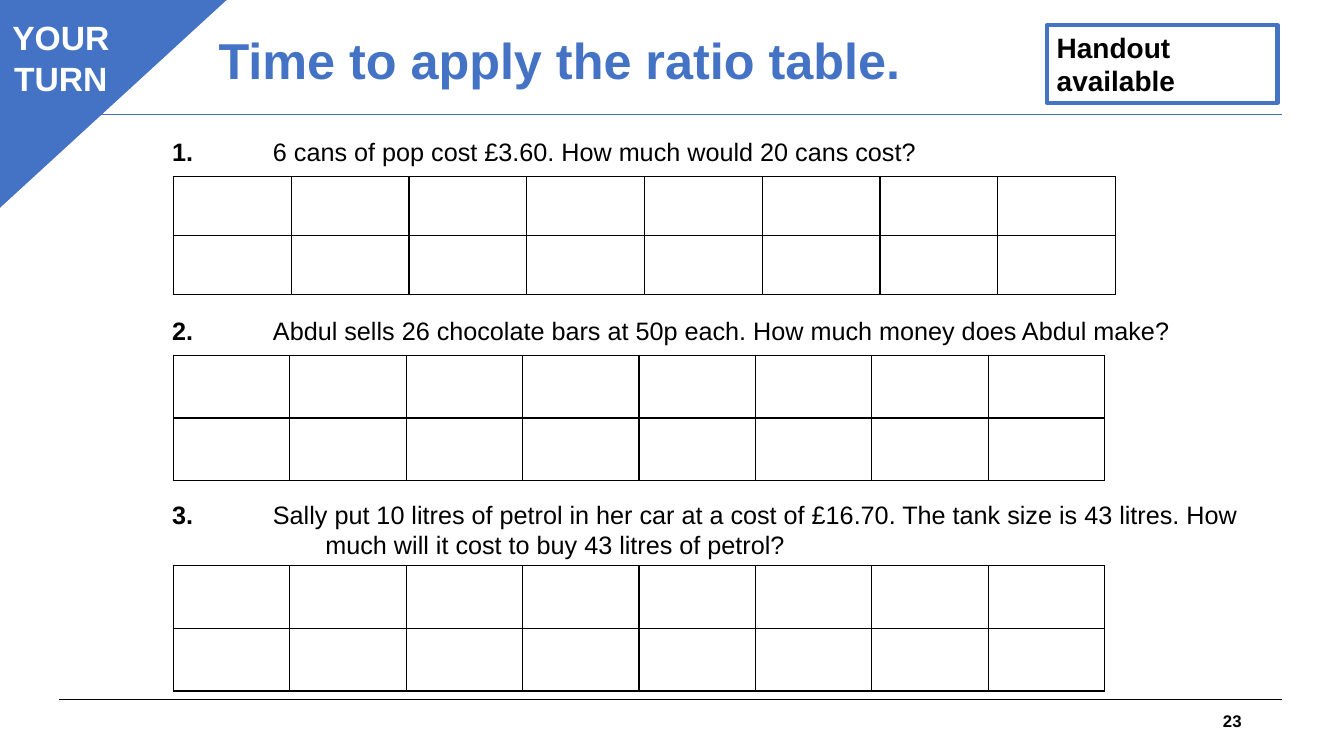
"""Build a slide with three ratio-table questions and blank working grids."""
from dataclasses import dataclass

from lxml.etree import SubElement
from pptx import Presentation
from pptx.dml.color import RGBColor
from pptx.enum.shapes import MSO_CONNECTOR, MSO_SHAPE
from pptx.enum.text import MSO_ANCHOR, PP_ALIGN
from pptx.oxml.ns import qn
from pptx.shapes.autoshape import Shape
from pptx.slide import Slide
from pptx.text.text import TextFrame, _Paragraph
from pptx.util import Pt

BLUE = "4472C4"
BLACK = "000000"
WHITE = "FFFFFF"
FONT = "Arial"
COLUMNS = 8
ROWS = 2
LEFT = 115.9
GRID_LEFT = 123.84
TAB_STOP = 72
WRAP_INDENT = 109.5


@dataclass
class Frame:
    left: float
    top: float
    width: float
    height: float


@dataclass
class Question:
    number: str
    lines: list[str]
    frame: Frame
    grid: Frame


QUESTIONS = [
    Question("1.", ["6 cans of pop cost £3.60. How much would 20 cans cost?"],
             Frame(LEFT, 93.7, 611, 29), Frame(GRID_LEFT, 126, 673.2, 84.2)),
    Question("2.", ["Abdul sells 26 chocolate bars at 50p each. How much money does Abdul make?"],
             Frame(LEFT, 221.4, 738, 29), Frame(GRID_LEFT, 253.8, 665.3, 89.6)),
    Question("3.", ["Sally put 10 litres of petrol in her car at a cost of £16.70. "
                    "The tank size is 43 litres. How",
                    "much will it cost to buy 43 litres of petrol?"],
             Frame(LEFT, 352.6, 798, 51), Frame(GRID_LEFT, 404, 665.3, 89.6)),
]


def color(value: str) -> RGBColor:
    return RGBColor.from_string(value)


def place(frame: Frame) -> tuple[Pt, Pt, Pt, Pt]:
    return Pt(frame.left), Pt(frame.top), Pt(frame.width), Pt(frame.height)


def add_span(para: _Paragraph, text: str, size: float, ink: str = BLACK, bold: bool = True) -> None:
    span = para.add_run()
    span.text = text
    span.font.name = FONT
    span.font.size = Pt(size)
    span.font.bold = bold
    span.font.color.rgb = color(ink)


def add_box(page: Slide, frame: Frame) -> TextFrame:
    text = page.shapes.add_textbox(*place(frame)).text_frame
    text.word_wrap = True
    text.vertical_anchor = MSO_ANCHOR.MIDDLE
    return text


def add_panel(page: Slide, kind: MSO_SHAPE, frame: Frame, fill: str | None, weight: float) -> Shape:
    panel = page.shapes.add_shape(kind, *place(frame))
    panel.shadow.inherit = False
    if fill:
        panel.fill.solid()
        panel.fill.fore_color.rgb = color(fill)
    else:
        panel.fill.background()
    panel.line.color.rgb = color(BLUE)
    panel.line.width = Pt(weight)
    panel.text_frame.word_wrap = True
    panel.text_frame.vertical_anchor = MSO_ANCHOR.TOP
    return panel


def add_rule(page: Slide, top: float, ink: str) -> None:
    rule = page.shapes.add_connector(MSO_CONNECTOR.STRAIGHT, Pt(42.5), Pt(top), Pt(916), Pt(top))
    rule.line.color.rgb = color(ink)
    rule.line.width = Pt(0.75)
    SubElement(rule._element.spPr, qn("a:effectLst"))


def add_grid(page: Slide, frame: Frame) -> None:
    table = page.shapes.add_table(ROWS, COLUMNS, *place(frame)).table
    table.first_row = False
    table.horz_banding = False
    for column in table.columns:
        column.width = Pt(frame.width / COLUMNS)
    for row in table.rows:
        row.height = Pt(frame.height / ROWS)
    for cell in table.iter_cells():
        properties = cell._tc.get_or_add_tcPr()
        for side in ("lnL", "lnR", "lnT", "lnB"):
            border = SubElement(properties, qn(f"a:{side}"), w=str(Pt(1)))
            paint = SubElement(border, qn("a:solidFill"))
            SubElement(paint, qn("a:srgbClr"), val=BLACK)
        cell.fill.background()


def add_question(page: Slide, question: Question) -> None:
    add_grid(page, question.grid)
    text = add_box(page, question.frame)
    para = text.paragraphs[0]
    stops = SubElement(para._p.get_or_add_pPr(), qn("a:tabLst"))
    SubElement(stops, qn("a:tab"), pos=str(Pt(TAB_STOP)), algn="l")
    add_span(para, f"{question.number}\t", 18)
    add_span(para, question.lines[0], 18, bold=False)
    for line in question.lines[1:]:
        para = text.add_paragraph()
        para._p.get_or_add_pPr().set("marL", str(Pt(WRAP_INDENT)))
        add_span(para, line, 18, bold=False)
    para.space_after = Pt(6)


def add_header(page: Slide) -> None:
    title = add_box(page, Frame(149, 10.8, 783.4, 68.4)).paragraphs[0]
    title.line_spacing = 0.9
    add_span(title, "Time to apply the ratio table.", 36, BLUE)

    corner = add_panel(page, MSO_SHAPE.ISOSCELES_TRIANGLE, Frame(-2.2, -1.4, 164.9, 151.2), BLUE, 1)
    corner.adjustments[0] = 0
    corner._element.spPr.get_or_add_xfrm().set("flipV", "1")

    badge = add_panel(page, MSO_SHAPE.RECTANGLE, Frame(0.9, 8.8, 85, 59.8), BLUE, 0.75).text_frame
    for index, word in enumerate(("YOUR", "TURN")):
        para = badge.add_paragraph() if index else badge.paragraphs[0]
        para.alignment = PP_ALIGN.CENTER
        add_span(para, word, 24, WHITE)

    handout = add_panel(page, MSO_SHAPE.RECTANGLE, Frame(747.7, 18, 164.9, 55.4), None, 3)
    para = handout.text_frame.paragraphs[0]
    para.alignment = PP_ALIGN.LEFT
    add_span(para, "Handout", 20)
    para.add_line_break()
    add_span(para, "available", 20)


def main() -> None:
    deck = Presentation()
    deck.slide_width = Pt(960)
    deck.slide_height = Pt(540)
    page = deck.slides.add_slide(deck.slide_layouts[6])
    add_rule(page, 500, BLACK)
    add_rule(page, 82, BLUE)
    add_header(page)
    number = add_box(page, Frame(678, 500.4, 216, 28.8)).paragraphs[0]
    number.alignment = PP_ALIGN.RIGHT
    add_span(number, "23", 12)
    for question in QUESTIONS:
        add_question(page, question)
    deck.save("out.pptx")


if __name__ == "__main__":
    main()
